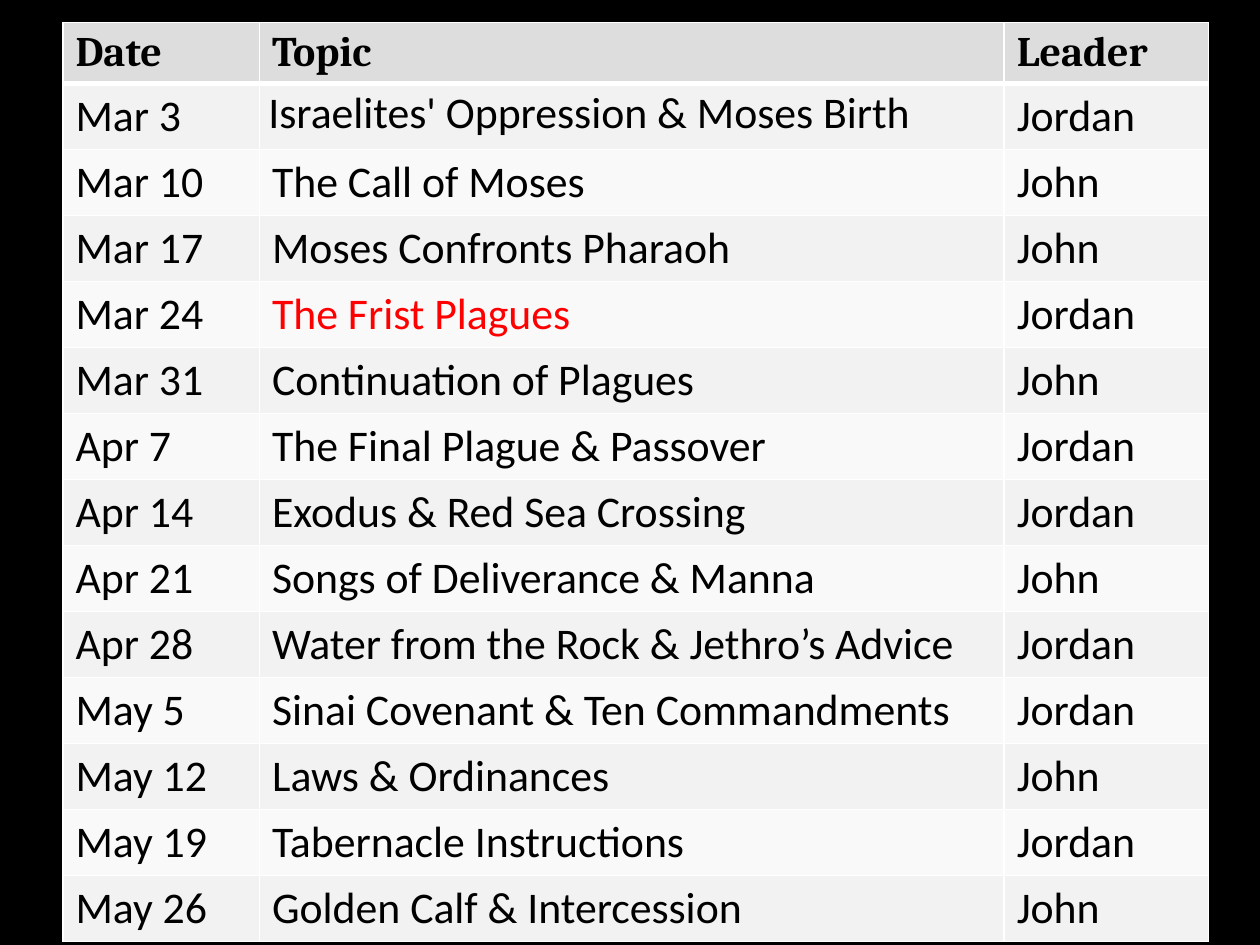
from lxml import etree
from pptx import Presentation
from pptx import util as u
from pptx.dml.color import RGBColor
from pptx.oxml import ns

BLACK = RGBColor(0x00, 0x00, 0x00)
WHITE = RGBColor(0xFF, 0xFF, 0xFF)
RED = RGBColor(0xFF, 0x00, 0x00)
HEADER_GREY = RGBColor(0xDD, 0xDD, 0xDD)
BANDS = (RGBColor(0xF9, 0xF9, 0xF9), RGBColor(0xF2, 0xF2, 0xF2))

HEADINGS = ("Date", "Topic", "Leader")
SESSIONS = (
    ("Mar 3", "Israelites' Oppression & Moses Birth", "Jordan"),
    ("Mar 10", "The Call of Moses", "John"),
    ("Mar 17", "Moses Confronts Pharaoh", "John"),
    ("Mar 24", "The Frist Plagues", "Jordan"),
    ("Mar 31", "Continuation of Plagues", "John"),
    ("Apr 7", "The Final Plague & Passover", "Jordan"),
    ("Apr 14", "Exodus & Red Sea Crossing", "Jordan"),
    ("Apr 21", "Songs of Deliverance & Manna", "John"),
    ("Apr 28", "Water from the Rock & Jethro’s Advice", "Jordan"),
    ("May 5", "Sinai Covenant & Ten Commandments", "Jordan"),
    ("May 12", "Laws & Ordinances", "John"),
    ("May 19", "Tabernacle Instructions", "Jordan"),
    ("May 26", "Golden Calf & Intercession", "John"),
)
CURRENT_TOPIC = "The Frist Plagues"
COLUMN_WIDTHS = (1.56, 5.91, 1.62)
ROW_HEIGHT = 0.46


class ScheduleSlide:
    heading_font = "Cambria"
    body_font = "Calibri"
    heading_size = 24
    body_size = 25

    def __init__(self, deck):
        self.slide = deck.slides.add_slide(deck.slide_layouts[6])
        background = self.slide.background.fill
        background.solid()
        background.fore_color.rgb = BLACK

    def borders(self, cell, bottom):
        properties = cell._tc.get_or_add_tcPr()
        for side, width in (("L", 1), ("R", 1), ("T", 1), ("B", bottom)):
            line = etree.SubElement(properties, ns.qn(f"a:ln{side}"), w=str(u.Pt(width)))
            fill = etree.SubElement(line, ns.qn("a:solidFill"))
            etree.SubElement(fill, ns.qn("a:srgbClr"), val=str(WHITE))

    def cell(self, cell, wording, row):
        is_heading = row == 0
        self.borders(cell, 3 if is_heading else 1)
        cell.fill.solid()
        cell.fill.fore_color.rgb = HEADER_GREY if is_heading else BANDS[row % 2]
        cell.text = wording
        font = cell.text_frame.paragraphs[0].font
        font.name = self.heading_font if is_heading else self.body_font
        font.size = u.Pt(self.heading_size if is_heading else self.body_size)
        font.bold = is_heading
        font.color.rgb = RED if wording == CURRENT_TOPIC else BLACK

    def table(self, rows, left, top):
        frame = self.slide.shapes.add_table(
            len(rows), len(COLUMN_WIDTHS), u.Inches(left), u.Inches(top),
            u.Inches(sum(COLUMN_WIDTHS)), u.Inches(ROW_HEIGHT * len(rows)))
        table = frame.table
        for column, width in zip(table.columns, COLUMN_WIDTHS):
            column.width = u.Inches(width)
        for index, (row, wordings) in enumerate(zip(table.rows, rows)):
            row.height = u.Inches(ROW_HEIGHT)
            for cell, wording in zip(row.cells, wordings):
                self.cell(cell, wording, index)
        return table


def main():
    deck = Presentation()
    deck.slide_width, deck.slide_height = u.Inches(10), u.Inches(7.5)
    schedule = ScheduleSlide(deck).table((HEADINGS, *SESSIONS), 0.5, 0.18)

    first_topic = schedule.cell(1, 1)
    first_topic.margin_left = first_topic.margin_right = u.Inches(0.07)
    first_topic.margin_top = first_topic.margin_bottom = 0
    first_topic.text_frame.paragraphs[0].line_spacing = 1.07

    deck.save("out.pptx")


if __name__ == "__main__":
    main()
